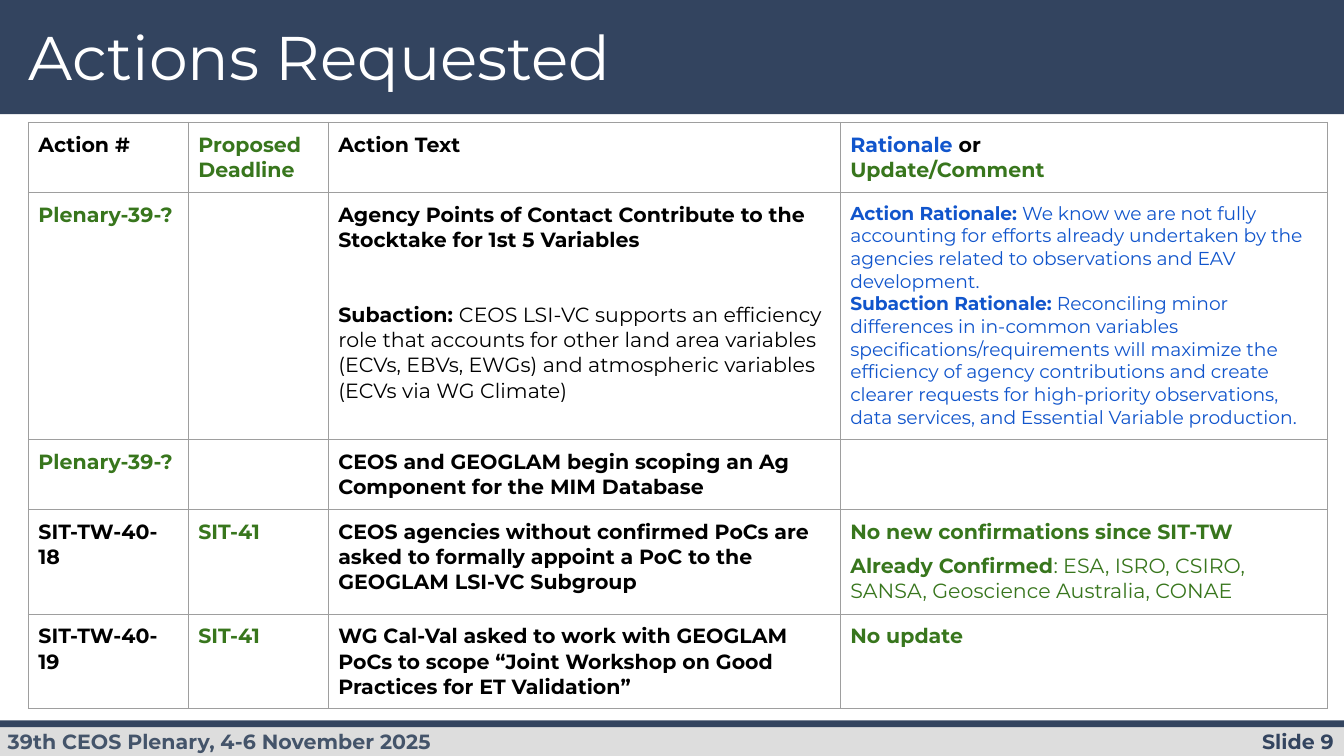
from lxml import etree
from pptx import Presentation
from pptx.dml.color import RGBColor
from pptx.enum.shapes import MSO_SHAPE
from pptx.enum.text import MSO_ANCHOR, PP_ALIGN
from pptx.oxml.ns import qn
from pptx.util import Pt

RECT = MSO_SHAPE.RECTANGLE
TOP, MIDDLE = MSO_ANCHOR.TOP, MSO_ANCHOR.MIDDLE
LEFT, RIGHT = PP_ALIGN.LEFT, PP_ALIGN.RIGHT

FONT = "Montserrat"
COLORS = {
    "navy": "33445F", "slate": "44546A", "gray": "DDDDDD", "line": "9E9E9E",
    "white": "FFFFFF", "black": "000000", "green": "38761D", "blue": "1155CC",
}

WIDTHS = [85.7, 75, 274.3, 260.8]
HEIGHTS = [37.5, 132.3, 37.5, 56.2, 50.9]
INSET = 5.4


def bold(text, color="black"):
    return text, color, True


def plain(text, color="black"):
    return text, color, False


def para(*runs, size=11, before=0):
    return {"runs": runs, "size": size, "before": before}


ROWS = [
    [
        [para(bold("Action #"))],
        [para(bold("Proposed Deadline", "green"))],
        [para(bold("Action Text"))],
        [para(bold("Rationale", "blue"), bold(" or")),
         para(bold("Update/Comment", "green"))],
    ],
    [
        [para(bold("Plenary-39-?", "green"))],
        [],
        [para(bold("Agency Points of Contact Contribute to the Stocktake "
                   "for 1st 5 Variables")),
         para(bold("Subaction: "),
              plain("CEOS LSI-VC supports an efficiency role that accounts "
                    "for other land area variables (ECVs, EBVs, EWGs) and "
                    "atmospheric variables (ECVs via WG Climate)"),
              before=27)],
        [para(bold("Action Rationale: ", "blue"),
              plain("We know we are not fully accounting for efforts already "
                    "undertaken by the agencies related to observations and "
                    "EAV development.", "blue"), size=10),
         para(bold("Subaction Rationale: ", "blue"),
              plain("Reconciling minor differences in in-common variables "
                    "specifications/requirements will maximize the efficiency "
                    "of agency contributions and create clearer requests for "
                    "high-priority observations, data services, and Essential "
                    "Variable production.", "blue"), size=10)],
    ],
    [
        [para(bold("Plenary-39-?", "green"))],
        [],
        [para(bold("CEOS and GEOGLAM begin scoping an Ag Component for the "
                   "MIM Database"))],
        [],
    ],
    [
        [para(bold("SIT-TW-40-18"))],
        [para(bold("SIT-41", "green"))],
        [para(bold("CEOS agencies without confirmed PoCs are asked to "
                   "formally appoint a PoC to the GEOGLAM LSI-VC Subgroup"))],
        [para(bold("No new confirmations since SIT-TW", "green")),
         para(bold("Already Confirmed", "green"),
              plain(": ESA, ISRO, CSIRO, SANSA, Geoscience Australia, CONAE",
                    "green"), before=5)],
    ],
    [
        [para(bold("SIT-TW-40-19"))],
        [para(bold("SIT-41", "green"))],
        [para(bold("WG Cal-Val asked to work with GEOGLAM PoCs to scope "
                   "“Joint Workshop on Good Practices for ET Validation”"))],
        [para(bold("No update", "green"))],
    ],
]


def assign(item, values):
    for name, value in values.items():
        setattr(item, name, value)


def paint(fill, color):
    fill.solid()
    fill.fore_color.rgb = RGBColor.from_string(COLORS[color])


def add_bar(slide, top, height, color):
    bar = slide.shapes.add_shape(RECT, 0, Pt(top), Pt(720), Pt(height))
    bar.shadow.inherit = False
    paint(bar.fill, color)
    bar.line.fill.background()


def write(frame, paras, align=LEFT, spacing=None):
    for i, item in enumerate(paras):
        line = frame.paragraphs[0] if i == 0 else frame.add_paragraph()
        assign(line, {"alignment": align, "line_spacing": spacing,
                      "space_before": Pt(item["before"])})
        for text, color, heavy in item["runs"]:
            run = line.add_run()
            run.text = text
            assign(run.font, {"name": FONT, "size": Pt(item["size"]),
                              "bold": heavy})
            run.font.color.rgb = RGBColor.from_string(COLORS[color])


def add_label(slide, box, text, pads, anchor=TOP, **style):
    frame = slide.shapes.add_textbox(*map(Pt, box)).text_frame
    side, edge = map(Pt, pads)
    assign(frame, {"word_wrap": True, "vertical_anchor": anchor,
                   "margin_left": side, "margin_right": side,
                   "margin_top": edge, "margin_bottom": edge})
    write(frame, [text], **style)


def add_borders(cell):
    """Outline the cell; border elements must come before its fill."""
    props = cell._tc.get_or_add_tcPr()
    for i, tag in enumerate(("a:lnL", "a:lnR", "a:lnT", "a:lnB")):
        edge = etree.Element(qn(tag), w=str(Pt(0.56)))
        fill = etree.SubElement(edge, qn("a:solidFill"))
        etree.SubElement(fill, qn("a:srgbClr"), val=COLORS["line"])
        props.insert(i, edge)


def add_grid(slide):
    shape = slide.shapes.add_table(
        len(ROWS), len(WIDTHS), Pt(15.2), Pt(65.5),
        Pt(sum(WIDTHS)), Pt(sum(HEIGHTS)))
    table = shape.table
    assign(table, {"first_row": False, "horz_banding": False})
    for col, width in zip(table.columns, WIDTHS):
        col.width = Pt(width)
    for row, height, texts in zip(table.rows, HEIGHTS, ROWS):
        row.height = Pt(height)
        for cell, paras in zip(row.cells, texts):
            for side in ("left", "right", "top", "bottom"):
                setattr(cell, f"margin_{side}", Pt(INSET))
            cell.fill.background()
            add_borders(cell)
            write(cell.text_frame, paras)


def main():
    deck = Presentation()
    assign(deck, {"slide_width": Pt(720), "slide_height": Pt(405)})
    slide = deck.slides.add_slide(deck.slide_layouts[6])
    add_bar(slide, 0, 61.2, "navy")
    add_bar(slide, 388.4, 16.6, "gray")
    add_bar(slide, 386, 3.6, "navy")
    add_label(slide, (606.2, 388.1, 113.8, 18.7),
              para(bold("Slide 9", "navy")), (5.4, 2.7), align=RIGHT)
    add_label(slide, (-3, 383.8, 275, 28),
              para(bold("39th CEOS Plenary, 4-6 November 2025", "slate")),
              (7.2, 7.2))
    add_label(slide, (10, 9.5, 554.4, 46),
              para(plain("Actions Requested", "white"), size=33),
              (5.4, 2.7), MIDDLE, spacing=0.9)
    add_grid(slide)
    deck.save("out.pptx")


if __name__ == "__main__":
    main()
